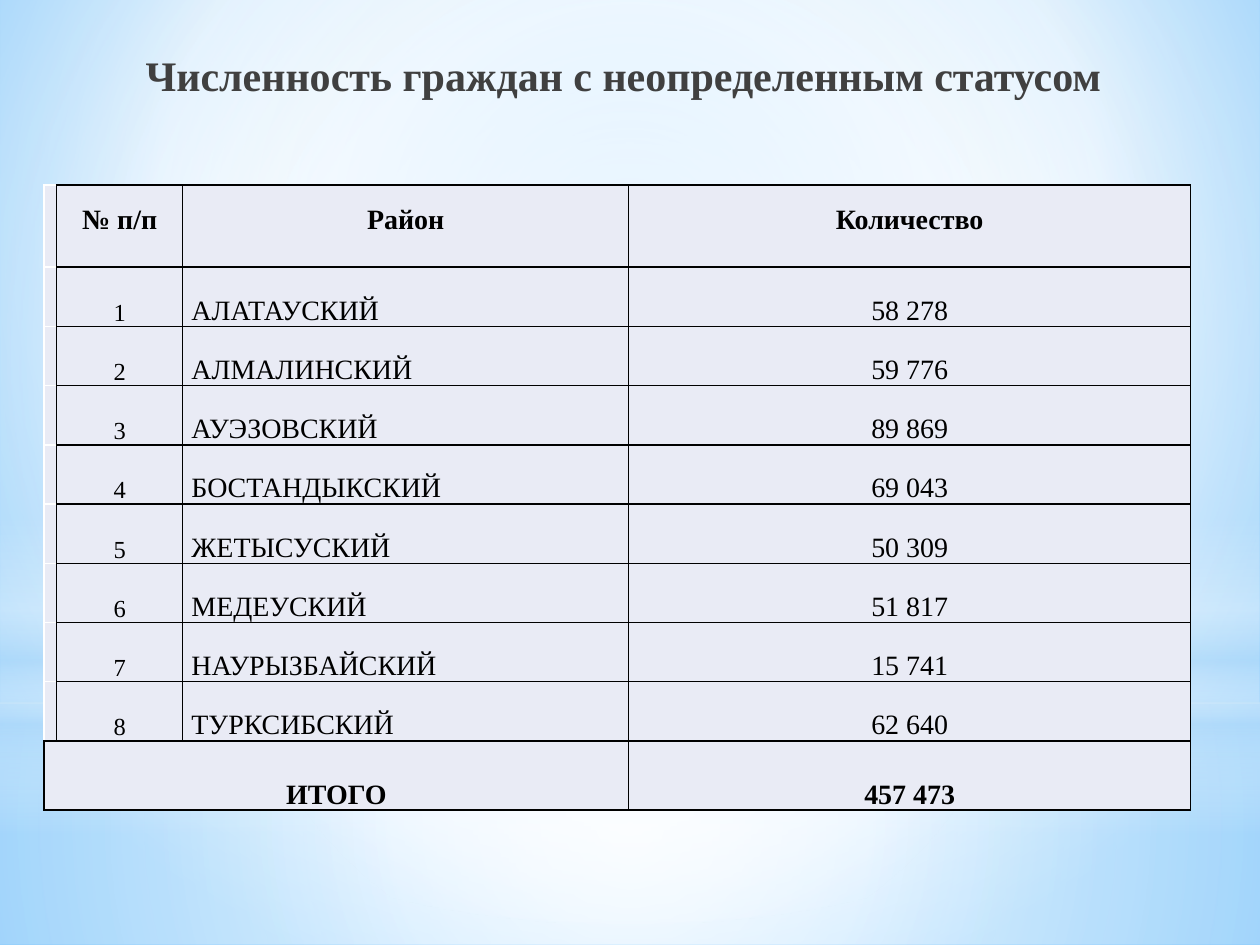
from lxml import etree
from pptx import Presentation, util as u
from pptx.dml.color import RGBColor
from pptx.enum import shapes, text
from pptx.oxml.ns import qn

BLACK, WHITE, CELL, TITLE = "000000", "FFFFFF", "E9EBF5", "404040"
SKY = "B4DCFA"
CENTER, JUSTIFY = text.PP_ALIGN.CENTER, text.PP_ALIGN.JUSTIFY
DISTRICTS = [
    ("АЛАТАУСКИЙ", "58 278"),
    ("АЛМАЛИНСКИЙ", "59 776"),
    ("АУЭЗОВСКИЙ", "89 869"),
    ("БОСТАНДЫКСКИЙ", "69 043"),
    ("ЖЕТЫСУСКИЙ", "50 309"),
    ("МЕДЕУСКИЙ", "51 817"),
    ("НАУРЫЗБАЙСКИЙ", "15 741"),
    ("ТУРКСИБСКИЙ", "62 640"),
]


def rgb(color):
    return RGBColor.from_string(color)


def assign(obj, values):
    for name, value in values.items():
        setattr(obj, name, value)


def sub(parent, tag, **attrs):
    return etree.SubElement(parent, qn(tag), {k: str(v) for k, v in attrs.items()})


class Deck:
    """Holds the style and the current slide; lengths are percent of the slide."""

    font = "Times New Roman"

    def __init__(self, width, height):
        self.prs = Presentation()
        self.prs.slide_width, self.prs.slide_height = u.Inches(width), u.Inches(height)
        self.s = self.prs.slides.add_slide(self.prs.slide_layouts[6])

    def x(self, share):
        return round(self.prs.slide_width * share / 100)

    def y(self, share):
        return round(self.prs.slide_height * share / 100)

    def box(self, left, top, width, height):
        return self.x(left), self.y(top), self.x(width), self.y(height)

    def gradient(self, fill, element, stops, focus=None):
        """Stops are (position, colour, opacity); without a focus it runs downwards."""
        fill.gradient()
        grad = element.find(".//" + qn("a:gradFill"))
        for child in list(grad):
            grad.remove(child)
        stop_list = sub(grad, "a:gsLst")
        for pos, color, opacity in stops:
            gs = sub(stop_list, "a:gs", pos=pos * 1000)
            clr = sub(gs, "a:srgbClr", val=color)
            if opacity < 100:
                sub(clr, "a:alpha", val=opacity * 1000)
        if focus:
            rect = {side: share * 1000 for side, share in zip("ltrb", focus)}
            sub(sub(grad, "a:path", path="circle"), "a:fillToRect", **rect)
        else:
            sub(grad, "a:lin", ang=5400000, scaled=0)

    def background(self, stops, focus):
        self.gradient(self.s.background.fill, self.s.element, stops, focus)

    def glow(self, kind, place, stops, focus=None):
        sp = self.s.shapes.add_shape(kind, *self.box(*place))
        sp.shadow.inherit = False
        sp.line.fill.background()
        self.gradient(sp.fill, sp.element, stops, focus)

    def words(self, tf, content, size, align=CENTER, bold=False, color=BLACK):
        p = tf.paragraphs[0]
        p.alignment = align
        r = p.add_run()
        r.text = content
        assign(r.font, dict(name=self.font, size=u.Pt(size), bold=bold))
        r.font.color.rgb = rgb(color)

    def title(self, place, content):
        tf = self.s.shapes.add_textbox(*self.box(*place)).text_frame
        assign(tf, dict(word_wrap=True, vertical_anchor=text.MSO_ANCHOR.TOP,
                        margin_top=u.Inches(0.09), margin_right=u.Inches(0.2)))
        self.words(tf, content, 24, bold=True, color=TITLE)

    def table(self, left, top, cols, rows):
        place = self.box(left, top, sum(cols), sum(rows))
        table = self.s.shapes.add_table(len(rows), len(cols), *place).table
        assign(table, dict(first_row=False, horz_banding=False))
        for col, share in zip(table.columns, cols):
            col.width = self.x(share)
        for row, share in zip(table.rows, rows):
            row.height = self.y(share)
        return table

    def cell(self, cell, borders, left=0.01, bottom=0):
        """Borders are the colours of the left, right, top and bottom edges."""
        small = u.Inches(0.01)
        assign(cell, dict(margin_left=u.Inches(left), margin_right=small,
                          margin_top=small, margin_bottom=u.Inches(bottom),
                          vertical_anchor=text.MSO_ANCHOR.BOTTOM))
        tc_pr = cell._tc.get_or_add_tcPr()
        for side, color in zip("LRTB", borders):
            ln = sub(tc_pr, "a:ln" + side, w=u.Pt(1))
            sub(sub(ln, "a:solidFill"), "a:srgbClr", val=color)
        cell.fill.solid()
        cell.fill.fore_color.rgb = rgb(CELL)


def district_table(deck):
    rows = [["", "№ п/п", "Район", "Количество"]]
    rows += [["", str(n), *district] for n, district in enumerate(DISTRICTS, 1)]
    rows += [["ИТОГО", "", "", "457 473"]]
    last = len(rows) - 1
    heights = [8.67] + [6.27] * len(DISTRICTS) + [7.33]
    table = deck.table(3.5, 19.6, [1, 10, 35.4, 44.6], heights)
    table.cell(last, 0).merge(table.cell(last, 2))

    for i, row in enumerate(rows):
        header, total = i == 0, i == last
        for j, content in enumerate(row):
            body = not header and not total
            borders = [BLACK] * 4
            if j == 0 and not total:
                borders = [WHITE, BLACK, WHITE, BLACK if i == last - 1 else WHITE]
            name = body and j == 2
            cell = table.cell(i, j)
            deck.cell(cell, borders, left=0.07 if name else 0.01,
                      bottom=0.25 if header else 0)
            if content:
                deck.words(cell.text_frame, content, 14 if body and j == 1 else 16,
                           JUSTIFY if name else CENTER, bold=not body)


def main():
    deck = Deck(10, 7.5)
    rect, oval = shapes.MSO_SHAPE.RECTANGLE, shapes.MSO_SHAPE.OVAL
    middle = (50, 50, 50, 50)
    deck.background([(0, "9ED5FF", 100), (60, WHITE, 100), (100, "5BB9FF", 100)],
                    (20, 10, 20, 60))
    deck.glow(rect, (0, 74.4, 100, 25.6),
              [(0, WHITE, 91), (37, WHITE, 76), (100, SKY, 79)], middle)
    deck.glow(rect, (0, 0, 100, 74.4),
              [(0, WHITE, 89), (48, WHITE, 62), (100, SKY, 79)], middle)
    deck.glow(rect, (0, 54.93, 100, 33.33),
              [(0, WHITE, 0), (29, WHITE, 30), (45, SKY, 40),
               (55, WHITE, 26), (65, SKY, 60), (100, WHITE, 0)])
    deck.glow(oval, (0, 23.33, 100, 74.4), [(0, WHITE, 100), (56, WHITE, 0)], middle)
    deck.title((5, 4, 90, 12.67), "Численность граждан с неопределенным статусом")
    district_table(deck)
    deck.prs.save("out.pptx")


if __name__ == "__main__":
    main()
